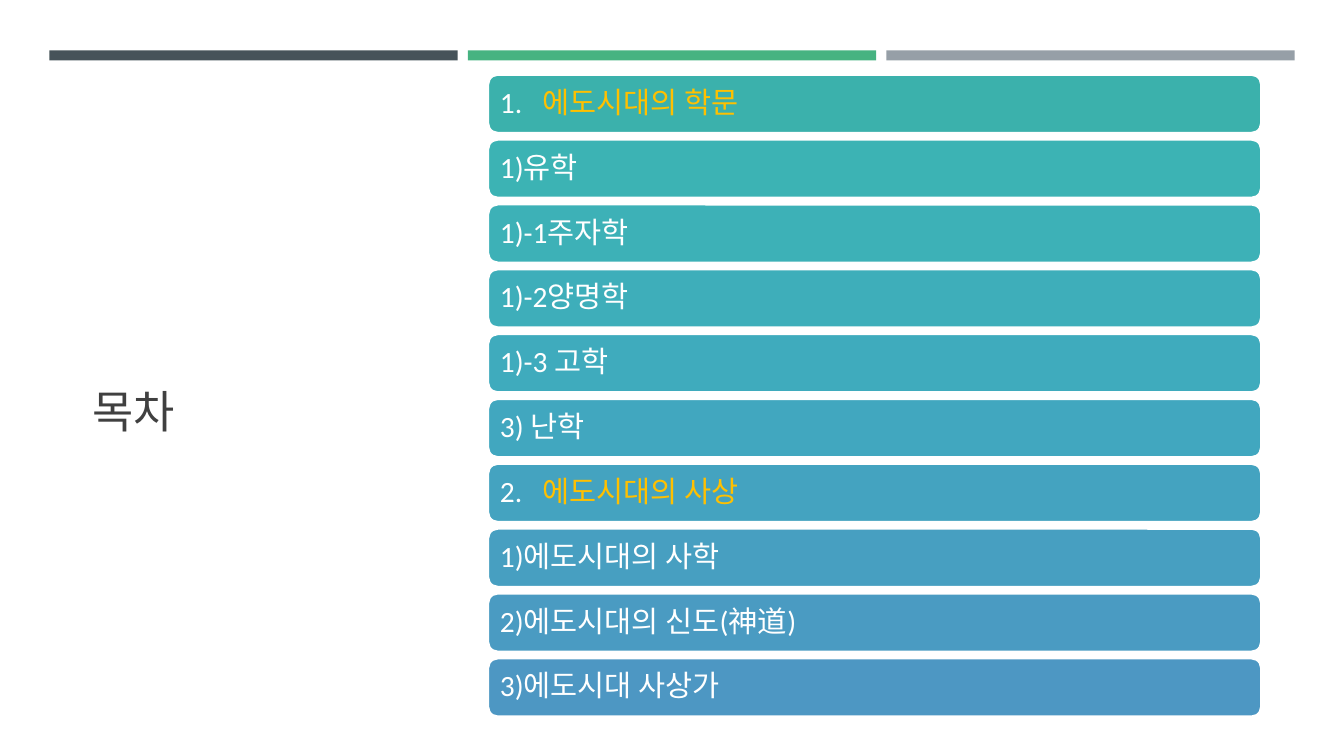
from pptx import Presentation
from pptx import util as u
from pptx.dml.color import RGBColor
from pptx.enum import shapes, text

WHITE = RGBColor(0xFF, 0xFF, 0xFF)
GOLD = RGBColor(0xFF, 0xC0, 0x00)
DARK_GRAY = RGBColor(0x40, 0x40, 0x40)
SLATE = RGBColor(0x46, 0x53, 0x59)
GREEN = RGBColor(0x46, 0xB3, 0x81)
SILVER = RGBColor(0x96, 0x9F, 0xA7)

TOPICS = [
    ("1.", "에도시대의 학문", RGBColor(0x3B, 0xB1, 0xAC)),
    ("", "1)유학", RGBColor(0x3C, 0xB3, 0xB4)),
    ("", "1)-1주자학", RGBColor(0x3D, 0xB1, 0xB7)),
    ("", "1)-2양명학", RGBColor(0x3E, 0xAE, 0xBA)),
    ("", "1)-3 고학", RGBColor(0x3F, 0xAB, 0xBD)),
    ("", "3) 난학", RGBColor(0x41, 0xA7, 0xBF)),
    ("2.", "에도시대의 사상", RGBColor(0x44, 0xA3, 0xC0)),
    ("", "1)에도시대의 사학", RGBColor(0x47, 0x9F, 0xC1)),
    ("", "2)에도시대의 신도(神道)", RGBColor(0x4A, 0x9B, 0xC2)),
    ("", "3)에도시대 사상가", RGBColor(0x4D, 0x97, 0xC3)),
]
FIRST_TOP, LAST_TOP = 0.74, 6.53
HEADING_INDENT = u.Inches(0.42)


class ContentsSlide:
    font_name = "Calibri"

    def __init__(self, presentation):
        self.slide = presentation.slides.add_slide(presentation.slide_layouts[6])

    def box(self, kind, left, top, width, height, fill):
        shape = self.slide.shapes.add_shape(
            kind, u.Inches(left), u.Inches(top), u.Inches(width), u.Inches(height))
        shape.shadow.inherit = False
        shape.fill.solid()
        shape.fill.fore_color.rgb = fill
        return shape

    def bar(self, left, fill):
        shape = self.box(shapes.MSO_SHAPE.RECTANGLE, left, 0.5, 4.05, 0.1, fill)
        shape.line.fill.background()

    def frame(self, shape, inset):
        frame_format = {
            "word_wrap": True,
            "vertical_anchor": text.MSO_ANCHOR.MIDDLE,
            "margin_left": u.Inches(inset),
            "margin_right": u.Inches(inset),
        }
        for name, value in frame_format.items():
            setattr(shape.text_frame, name, value)
        paragraph = shape.text_frame.paragraphs[0]
        paragraph.alignment = text.PP_ALIGN.LEFT
        return paragraph

    def run(self, paragraph, content, size, color):
        run = paragraph.add_run()
        run.text = content
        for name, value in {"name": self.font_name, "size": u.Pt(size)}.items():
            setattr(run.font, name, value)
        run.font.color.rgb = color

    def title(self, content):
        shape = self.slide.shapes.add_textbox(
            u.Inches(0.82), u.Inches(1.14), u.Inches(3.34), u.Inches(5.86))
        self.run(self.frame(shape, 0.1), content, 32, DARK_GRAY)

    def topic(self, top, number, content, fill):
        shape = self.box(shapes.MSO_SHAPE.ROUNDED_RECTANGLE, 4.84, top, 7.67, 0.58, fill)
        shape.line.color.rgb = WHITE
        shape.line.width = u.Pt(1.75)
        paragraph = self.frame(shape, 0.09)
        paragraph.line_spacing = 0.9
        if number:
            properties = paragraph._p.get_or_add_pPr()
            properties.set("marL", str(HEADING_INDENT))
            properties.set("indent", str(-HEADING_INDENT))
            self.run(paragraph, number + "\t", 21, WHITE)
        self.run(paragraph, content, 21, GOLD if number else WHITE)


def main():
    presentation = Presentation()
    presentation.slide_width = u.Inches(13.33)
    presentation.slide_height = u.Inches(7.5)
    contents = ContentsSlide(presentation)
    for index, color in enumerate((SLATE, GREEN, SILVER)):
        contents.bar(0.49 + index * 4.15, color)
    contents.title("목차")
    pitch = (LAST_TOP - FIRST_TOP) / (len(TOPICS) - 1)
    for index, (number, content, fill) in enumerate(TOPICS):
        contents.topic(FIRST_TOP + index * pitch, number, content, fill)
    presentation.save("out.pptx")


if __name__ == "__main__":
    main()
